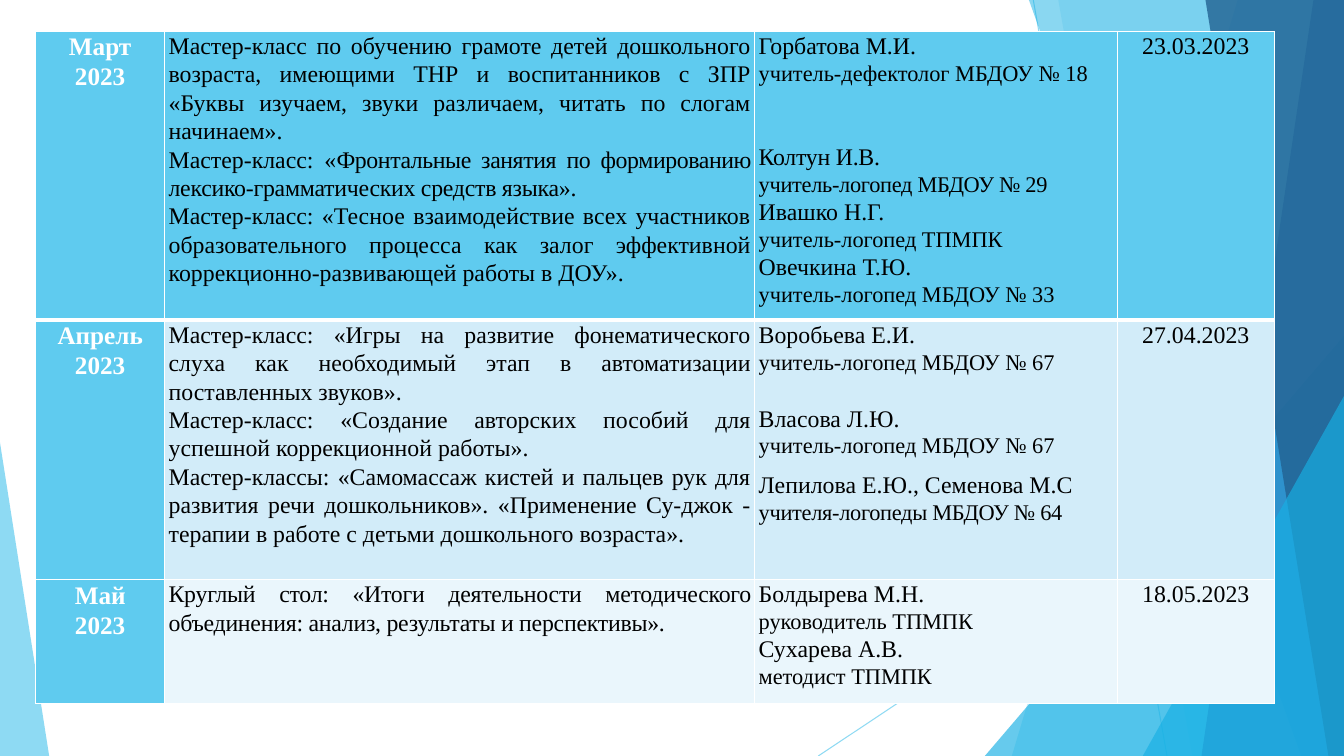
from lxml.etree import SubElement
from pptx import Presentation
from pptx.dml.color import RGBColor
from pptx.enum.shapes import MSO_CONNECTOR, MSO_SHAPE
from pptx.enum.text import PP_ALIGN
from pptx.oxml.ns import qn
from pptx.util import Cm, Pt

SKY = RGBColor(0x5F, 0xCB, 0xEF)
AZURE = RGBColor(0x17, 0xB0, 0xE4)
BLUE = RGBColor(0x2E, 0x83, 0xC3)
NAVY = RGBColor(0x22, 0x62, 0x92)
PALE = RGBColor(0xD2, 0xEC, 0xF9)
PALEST = RGBColor(0xEA, 0xF6, 0xFC)
WHITE = RGBColor(0xFF, 0xFF, 0xFF)
BLACK = RGBColor(0, 0, 0)

# Topics are paragraphs of (text, letter spacing) runs.
# Leaders are (name, position, gap above, name spacing, position spacing).
SCHEDULE = [
    {
        "month": "Март", "year": "2023", "date": "23.03.2023",
        "fill": SKY, "height": 7.28,
        "topics": [
            [("Мастер-класс по обучению грамоте детей дошкольного возраста, "
              "имеющими ТНР и воспитанников с ЗПР «Буквы изучаем, звуки "
              "различаем, читать по слогам начинаем».", 0)],
            [("Мастер-класс: «", 0),
             ("Фронтальные занятия по формированию ", -0.3),
             ("лексико-грамматических средств языка».", -0.2)],
            [("Мастер-класс: «Тесное взаимодействие всех участников "
              "образовательного процесса как залог эффективной "
              "коррекционно-развивающей работы в ДОУ».", 0)],
        ],
        "leaders": [
            ("Горбатова М.И.", "учитель-дефектолог МБДОУ № 18", 0, 0, 0),
            ("Колтун И.В.", "учитель-логопед МБДОУ № 29", 40, -0.2, -0.2),
            ("Ивашко Н.Г.", "учитель-логопед ТПМПК", 0, 0, 0),
            ("Овечкина Т.Ю.", "учитель-логопед МБДОУ № 33", 0, 0, 0),
        ],
    },
    {
        "month": "Апрель", "year": "2023", "date": "27.04.2023",
        "fill": PALE, "height": 6.54,
        "topics": [
            [("Мастер-класс: «Игры на развитие фонематического слуха как "
              "необходимый этап в автоматизации поставленных звуков».", 0)],
            [("Мастер-класс: «Создание авторских пособий для успешной "
              "коррекционной работы».", 0)],
            [("Мастер-классы: «Самомассаж кистей и пальцев рук для развития "
              "речи дошкольников». «Применение Су-джок - терапии в работе с "
              "детьми дошкольного возраста».", 0)],
        ],
        "leaders": [
            ("Воробьева Е.И.", "учитель-логопед МБДОУ № 67", 0, 0, 0),
            ("Власова Л.Ю.", "учитель-логопед МБДОУ № 67", 20.5, 0, 0),
            ("Лепилова Е.Ю., Семенова М.С", "учителя-логопеды МБДОУ № 64",
             8, 0, -0.2),
        ],
    },
    {
        "month": "Май", "year": "2023", "date": "18.05.2023",
        "fill": PALEST, "height": 3.12,
        "topics": [
            [("Круглый стол: «Итоги деятельности методического объединения: "
              "анализ, результаты и перспективы».", -0.2)],
        ],
        "leaders": [
            ("Болдырева М.Н.", "руководитель ТПМПК", 0, 0, 0),
            ("Сухарева А.В.", "методист ТПМПК", 0, 0, 0),
        ],
    },
]
COLUMN_WIDTHS = [3.25, 14.87, 9.14, 3.95]
TABLE_LEFT, TABLE_TOP = 0.9, 0.79

# Backdrop, in cm, from back to front
WIDTH, HEIGHT = 33.87, 19.05
RAYS = [(26.04, 0, 29.41, HEIGHT), (WIDTH, 10.24, 20.62, HEIGHT)]
# Panels reach the right edge: (x at top, x at bottom, colour, opacity)
# Wedges stand on the bottom edge: (left, top, width, apex, colour, opacity)
BACKDROP = [
    (31.19, 25.5, SKY, 36),
    (26.67, 30.05, SKY, 20),
    (24.82, 8.46, 9.05, 1, AZURE, 66),
    (25.93, 32.79, AZURE, 50),
    (33.1, 30.28, BLUE, 70),
    (30.38, 33.48, NAVY, 80),
    (28.8, 9.98, 5.07, 1, AZURE, 66),
    (0, 11.15, 1.24, 0, SKY, 70),
]


def set_opacity(properties, percent):
    colour = next(properties.iter(qn("a:srgbClr")))
    SubElement(colour, qn("a:alpha"), val=str(percent * 1000))


def add_ray(shapes, ends):
    ray = shapes.add_connector(MSO_CONNECTOR.STRAIGHT, *map(Cm, ends))
    ray.line.color.rgb = SKY
    ray.line.width = Pt(0.75)
    properties = ray._element.spPr
    set_opacity(properties, 70)
    SubElement(properties, qn("a:effectLst"))


def add_panel(shapes, top_x, bottom_x):
    outline = shapes.build_freeform(Cm(top_x), 0)
    outline.add_line_segments([(Cm(WIDTH), 0), (Cm(WIDTH), Cm(HEIGHT)),
                               (Cm(bottom_x), Cm(HEIGHT))])
    return outline.convert_to_shape()


def add_wedge(shapes, left, top, width, apex):
    wedge = shapes.add_shape(MSO_SHAPE.ISOSCELES_TRIANGLE, Cm(left), Cm(top),
                             Cm(width), Cm(HEIGHT - top))
    wedge.adjustments[0] = apex
    return wedge


def set_borders(cell, top, bottom):
    properties = cell._tc.get_or_add_tcPr()
    widths = {"lnL": 1, "lnR": 1, "lnT": top, "lnB": bottom}
    for position, (side, points) in enumerate(widths.items()):
        border = properties.makeelement(qn(f"a:{side}"), {"w": str(Pt(points))})
        fill = SubElement(border, qn("a:solidFill"))
        SubElement(fill, qn("a:srgbClr"), val=str(WHITE))
        properties.insert(position, border)


def write(cell, paragraphs, align, colour=BLACK, bold=False):
    """Fill a cell with (runs, size, gap above) paragraphs."""
    cell.margin_left = cell.margin_right = Cm(0.1)
    cell.margin_top = cell.margin_bottom = 0
    frame = cell.text_frame
    for index, (runs, size, gap) in enumerate(paragraphs):
        paragraph = frame.add_paragraph() if index else frame.paragraphs[0]
        paragraph.alignment = align
        paragraph.line_spacing = 1.07
        paragraph.space_before = Pt(gap)
        font = paragraph.font
        font.name, font.size, font.bold = "Times New Roman", Pt(size), bold
        font.color.rgb = colour
        for text, spacing in runs:
            run = paragraph.add_run()
            run.text = text
            if spacing:
                run._r.get_or_add_rPr().set("spc", str(round(spacing * 100)))


prs = Presentation()
prs.slide_width, prs.slide_height = Cm(WIDTH), Cm(HEIGHT)
slide = prs.slides.add_slide(prs.slide_layouts[6])

# Backdrop
for ends in RAYS:
    add_ray(slide.shapes, ends)
for *geometry, colour, opacity in BACKDROP:
    add_part = add_panel if len(geometry) == 2 else add_wedge
    part = add_part(slide.shapes, *geometry)
    part.shadow.inherit = False
    part.fill.solid()
    part.fill.fore_color.rgb = colour
    part.line.fill.background()
    set_opacity(part._element.spPr, opacity)

# Schedule table
schedule = slide.shapes.add_table(
    len(SCHEDULE), len(COLUMN_WIDTHS), Cm(TABLE_LEFT), Cm(TABLE_TOP),
    Cm(sum(COLUMN_WIDTHS)), Cm(sum(m["height"] for m in SCHEDULE))).table
schedule.first_row = schedule.horz_banding = False
for column, width in zip(schedule.columns, COLUMN_WIDTHS):
    column.width = Cm(width)

for number, (row, meeting) in enumerate(zip(schedule.rows, SCHEDULE)):
    row.height = Cm(meeting["height"])
    month, topics, leaders, date = row.cells
    write(month, [([(meeting[key], 0)], 18, 0) for key in ("month", "year")],
          PP_ALIGN.CENTER, WHITE, True)
    write(topics, [(runs, 17, 0) for runs in meeting["topics"]],
          PP_ALIGN.JUSTIFY)
    people = []
    for name, position, gap, name_spacing, position_spacing in meeting["leaders"]:
        people += [([(name, name_spacing)], 17, gap),
                   ([(position, position_spacing)], 16, 0)]
    write(leaders, people, PP_ALIGN.LEFT)
    write(date, [([(meeting["date"], 0)], 17, 0)], PP_ALIGN.CENTER)
    for index, cell in enumerate(row.cells):
        cell.fill.solid()
        cell.fill.fore_color.rgb = meeting["fill"] if index else SKY
        # A thick rule parts the first row from the second
        set_borders(cell, 3 if number == 1 else 1, 3 if number == 0 else 1)

prs.save("out.pptx")
